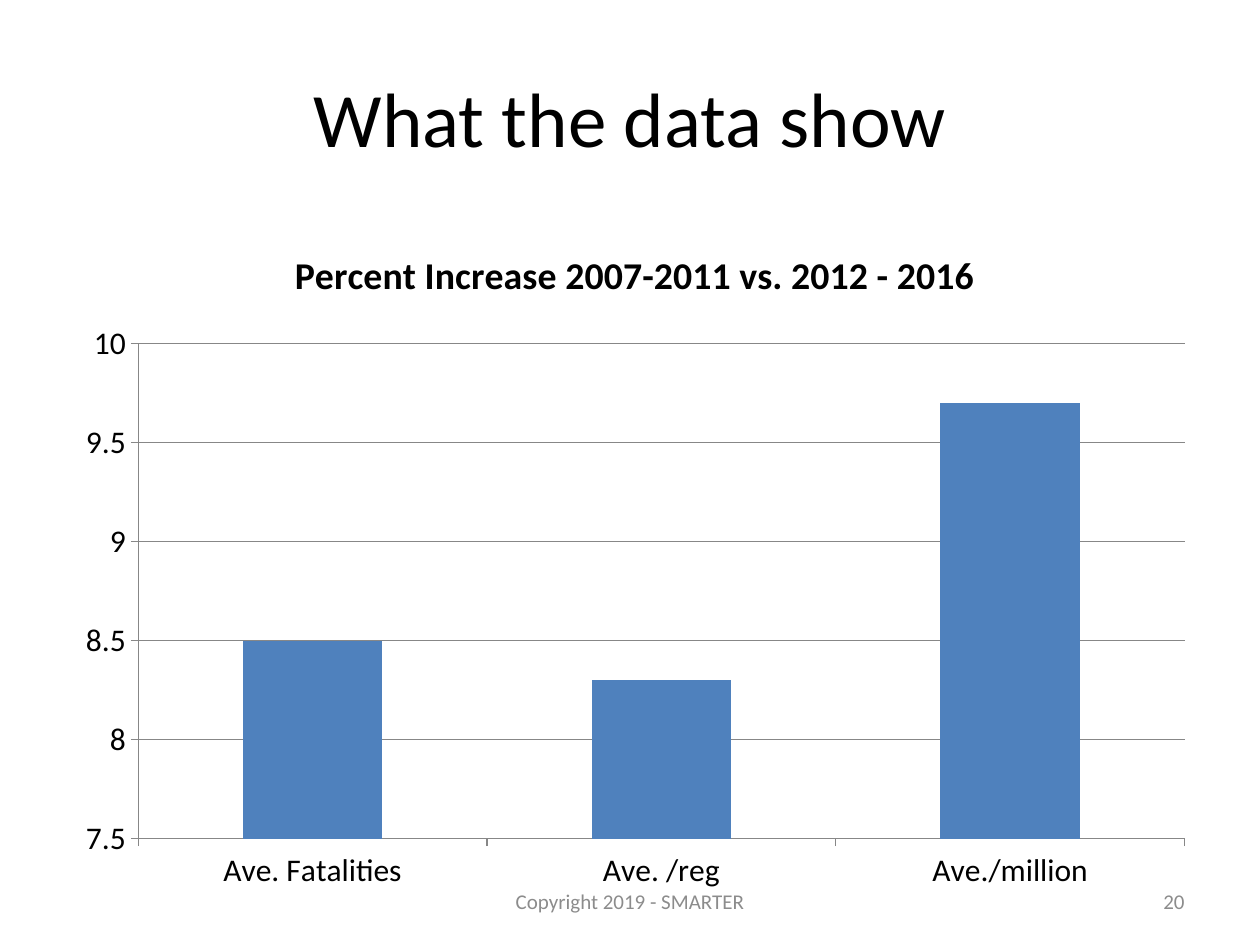
from pptx import Presentation
from pptx.chart.data import CategoryChartData
from pptx.dml.color import RGBColor
from pptx.enum.chart import XL_CHART_TYPE, XL_TICK_MARK
from pptx.enum.text import MSO_ANCHOR, PP_ALIGN
from pptx.util import Pt


def color(value):
    return RGBColor.from_string(value)


class SlideBuilder:
    """Hold the shared style and the current slide."""

    font_name = "Calibri"
    ink, muted, accent, rule = "000000", "8C8C8C", "4F81BD", "878787"

    def __init__(self, slide):
        self.slide = slide

    def style(self, font, size, ink, bold=False):
        formats = {"name": self.font_name, "size": Pt(size), "bold": bold}
        for attribute, value in formats.items():
            setattr(font, attribute, value)
        font.color.rgb = color(ink)

    def fill_text(self, frame, text, size, ink, align):
        formats = {"text": text, "word_wrap": True, "vertical_anchor": MSO_ANCHOR.MIDDLE}
        for attribute, value in formats.items():
            setattr(frame, attribute, value)
        paragraph = frame.paragraphs[0]
        paragraph.alignment = align
        self.style(paragraph.runs[0].font, size, ink)

    def title(self, text, left, top, width, height):
        heading = self.slide.shapes.title
        bounds = {"left": left, "top": top, "width": width, "height": height}
        for attribute, value in bounds.items():
            setattr(heading, attribute, Pt(value))
        self.fill_text(heading.text_frame, text, 44, self.ink, PP_ALIGN.CENTER)

    def footer(self, text, left, width, align):
        note = self.slide.shapes.add_textbox(Pt(left), Pt(500.5), Pt(width), Pt(28.75))
        self.fill_text(note.text_frame, text, 12, self.muted, align)

    def column_chart(self, heading, averages, bounds):
        increases = CategoryChartData()
        increases.categories = list(averages)
        increases.add_series(heading, list(averages.values()))
        chart = self.slide.shapes.add_chart(
            XL_CHART_TYPE.COLUMN_CLUSTERED, *map(Pt, bounds), increases
        ).chart
        self.style(chart.font, 18, self.ink)
        chart.has_legend = False
        chart.chart_title.text_frame.text = heading
        heading_run = chart.chart_title.text_frame.paragraphs[0].runs[0]
        self.style(heading_run.font, 21.6, self.ink, bold=True)

        columns = chart.plots[0]
        columns.gap_width = 150
        columns.vary_by_categories = False
        fill = columns.series[0].format.fill
        fill.solid()
        fill.fore_color.rgb = color(self.accent)

        scale = {"minimum_scale": 7.5, "maximum_scale": 10, "major_unit": 0.5,
                 "has_major_gridlines": True}
        for attribute, value in scale.items():
            setattr(chart.value_axis, attribute, value)
        chart.value_axis.tick_labels.number_format = "General"
        chart.value_axis.tick_labels.number_format_is_linked = False
        for axis in (chart.category_axis, chart.value_axis):
            axis.major_tick_mark = XL_TICK_MARK.OUTSIDE
            axis.minor_tick_mark = XL_TICK_MARK.NONE
        for ruled in (chart.category_axis, chart.value_axis, chart.value_axis.major_gridlines):
            ruled.format.line.color.rgb = color(self.rule)
            ruled.format.line.width = Pt(0.75)


def main():
    deck = Presentation()
    deck.slide_width, deck.slide_height = Pt(720), Pt(540)
    builder = SlideBuilder(deck.slides.add_slide(deck.slide_layouts[5]))
    builder.title("What the data show", 36, 21.6, 648, 90)
    builder.column_chart(
        "Percent Increase 2007-2011 vs. 2012 - 2016",
        {"Ave. Fatalities": 8.5, "Ave. /reg": 8.3, "Ave./million": 9.7},
        (36, 126, 654, 390),
    )
    builder.footer("Copyright 2019 - SMARTER", 246, 228, PP_ALIGN.CENTER)
    builder.footer("20", 516, 168, PP_ALIGN.RIGHT)
    deck.save("out.pptx")


if __name__ == "__main__":
    main()
